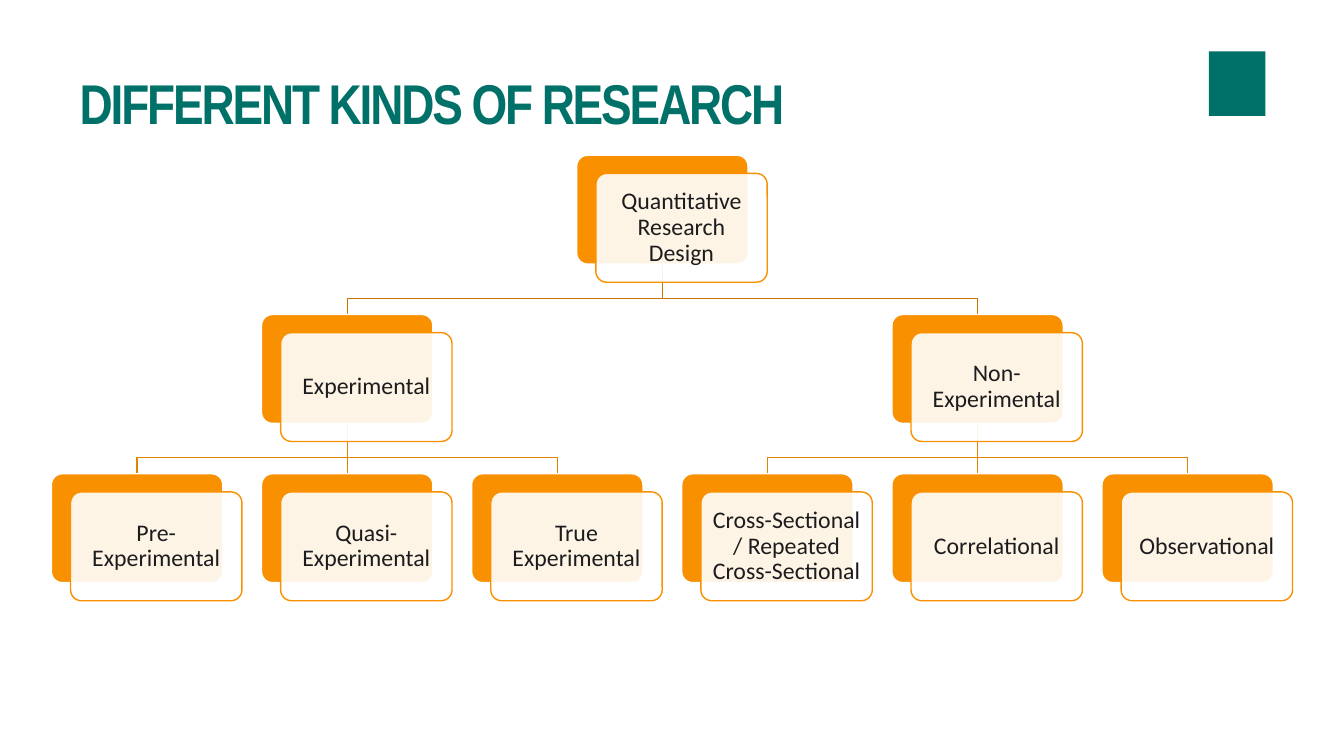
from lxml import etree
from pptx import Presentation
from pptx import util as u
from pptx.dml.color import RGBColor
from pptx.enum import shapes, text
from pptx.oxml import ns

TEAL = RGBColor(0x00, 0x71, 0x68)
ORANGE = RGBColor(0xF8, 0x90, 0x00)
ROOT_LINE = RGBColor(0xC7, 0x73, 0x00)
BRANCH_LINE = RGBColor(0xE1, 0x83, 0x00)
INK = RGBColor(0x1C, 0x1C, 0x1E)
WHITE = RGBColor(0xFF, 0xFF, 0xFF)

CARD_WIDTH, CARD_HEIGHT = 1.7, 1.08
SHIFT_X, SHIFT_Y = 0.19, 0.18
BEND = 0.34
COLUMNS, ROWS = 6, 3

TREE = ("Quantitative Research Design", 2.5, [
    ("Experimental", 1, [
        ("Pre-Experimental", 0, []),
        ("Quasi-Experimental", 1, []),
        ("True Experimental", 2, []),
    ]),
    ("Non-Experimental", 4, [
        ("Cross-Sectional / Repeated Cross-Sectional", 3, []),
        ("Correlational", 4, []),
        ("Observational", 5, []),
    ]),
])


def apply(target, values):
    for name, value in values.items():
        setattr(target, name, value)


def write(frame, words, inset, align, font):
    margins = dict.fromkeys(
        ("margin_left", "margin_top", "margin_right", "margin_bottom"), u.Inches(inset))
    apply(frame, margins | {"word_wrap": True, "auto_size": text.MSO_AUTO_SIZE.NONE,
                            "vertical_anchor": text.MSO_ANCHOR.MIDDLE})
    para = frame.paragraphs[0]
    apply(para, {"alignment": align, "line_spacing": 0.9})
    span = para.add_run()
    span.text = words
    color = font.pop("color")
    apply(span.font, font)
    span.font.color.rgb = color
    return span


def add_box(page, kind, box, fill, line=None):
    shape = page.shapes.add_shape(kind, *map(u.Inches, box))
    shape.shadow.inherit = False
    shape.fill.solid()
    shape.fill.fore_color.rgb = fill
    if line is None:
        shape.line.fill.background()
    else:
        shape.line.color.rgb = line
        shape.line.width = u.Pt(1)
    return shape


def add_title(page, box):
    title = page.shapes.title
    apply(title, dict(zip(("left", "top", "width", "height"), map(u.Inches, box))))
    span = write(title.text_frame, "DIFFERENT KINDS OF RESEARCH", 0, text.PP_ALIGN.LEFT,
                 {"name": "Arial Narrow", "size": u.Pt(40), "bold": True, "color": TEAL})
    span.font._element.set("spc", "-150")


def add_card(page, words, left, top):
    rounded = shapes.MSO_SHAPE.ROUNDED_RECTANGLE
    back = add_box(page, rounded, (left, top, CARD_WIDTH, CARD_HEIGHT), ORANGE, WHITE)
    front = add_box(page, rounded, (left + SHIFT_X, top + SHIFT_Y, CARD_WIDTH, CARD_HEIGHT),
                    WHITE, ORANGE)
    for card in (back, front):
        card.adjustments[0] = 0.1
    color = front.fill._xPr.find(".//" + ns.qn("a:srgbClr"))
    etree.SubElement(color, ns.qn("a:alpha")).set("val", "90000")
    write(front.text_frame, words, 0.07, text.PP_ALIGN.CENTER,
          {"name": "Calibri", "size": u.Pt(17), "color": INK})


def add_branch(page, start, end, color):
    x1, y1, x2, y2 = map(u.Inches, (*start, *end))
    if start[0] == end[0]:
        line = page.shapes.add_connector(shapes.MSO_CONNECTOR.STRAIGHT, x1, y1, x2, y2)
        etree.SubElement(line._element.spPr, ns.qn("a:effectLst"))
    else:
        bend = y1 + u.Inches(BEND)
        builder = page.shapes.build_freeform(x1, y1)
        builder.add_line_segments([(x1, bend), (x2, bend), (x2, y2)], close=False)
        line = builder.convert_to_shape()
        line.fill.background()
        line.shadow.inherit = False
    line.line.color.rgb = color
    line.line.width = u.Pt(1)


def add_tree(page, box):
    left, top, width, height = box
    column_step = (width - CARD_WIDTH - SHIFT_X) / (COLUMNS - 1)
    row_step = (height - CARD_HEIGHT - SHIFT_Y) / (ROWS - 1)

    def corner(column, row):
        return left + column * column_step, top + row * row_step

    def add_branches(node, row):
        x, y = corner(node[1], row)
        for child in node[2]:
            child_x, child_y = corner(child[1], row + 1)
            add_branch(page, (x + CARD_WIDTH / 2, y + CARD_HEIGHT),
                       (child_x + CARD_WIDTH / 2, child_y),
                       BRANCH_LINE if row else ROOT_LINE)
            add_branches(child, row + 1)

    def add_cards(node, row):
        add_card(page, node[0], *corner(node[1], row))
        for child in node[2]:
            add_cards(child, row + 1)

    add_branches(TREE, 0)
    add_cards(TREE, 0)


def main():
    deck = Presentation()
    apply(deck, {"slide_width": u.Inches(13.33), "slide_height": u.Inches(7.5)})
    page = deck.slides.add_slide(deck.slide_layouts.get_by_name("Title Only"))
    add_title(page, (0.79, 0.4, 11.76, 1.31))
    add_box(page, shapes.MSO_SHAPE.RECTANGLE, (11.99, 0.51, 0.56, 0.64), TEAL)
    add_tree(page, (0.51, 1.54, 12.31, 4.42))
    deck.save("out.pptx")


if __name__ == "__main__":
    main()
